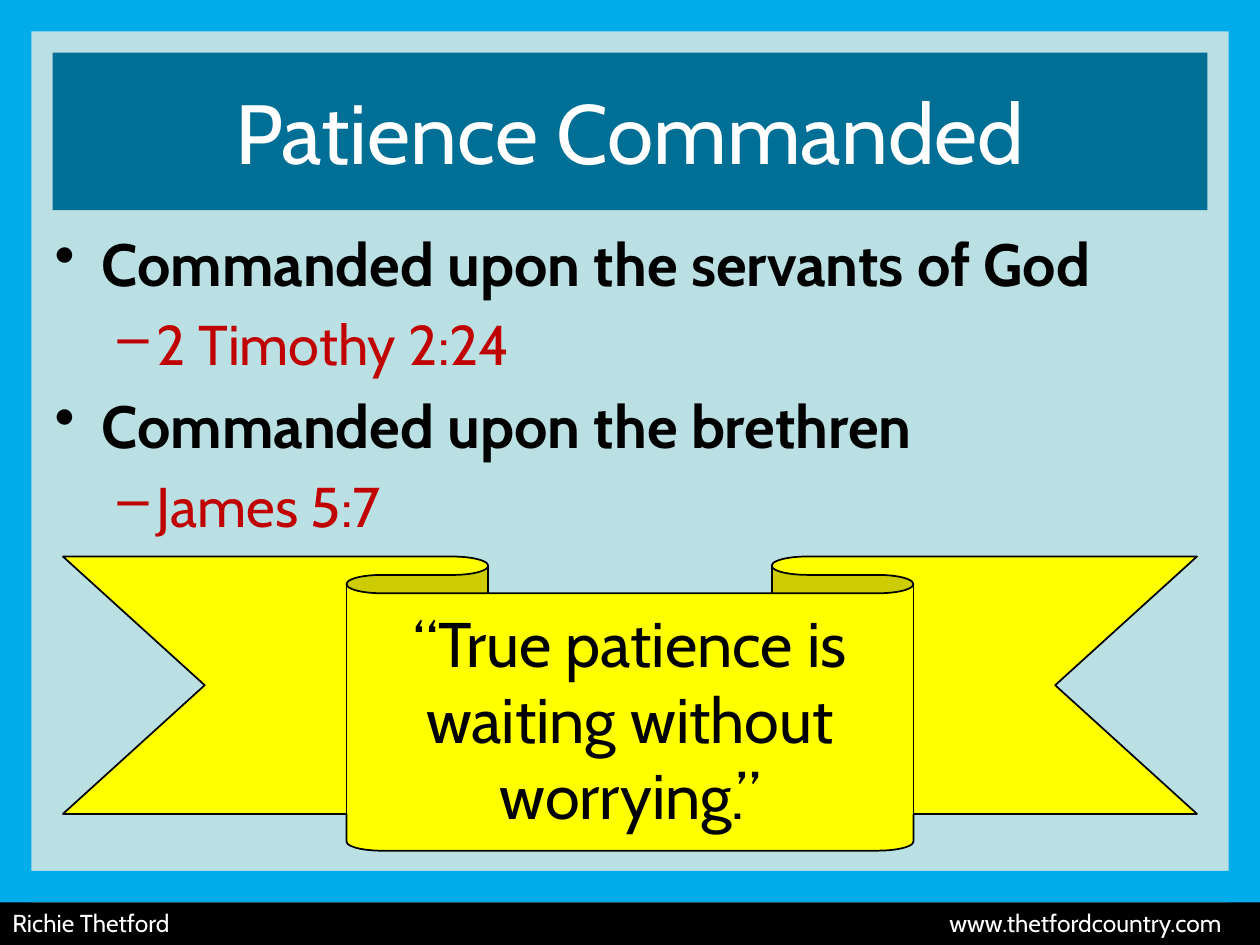
"""Build the "Patience Commanded" slide."""
from lxml.etree import SubElement
from pptx import Presentation
from pptx.dml.color import RGBColor
from pptx.enum.shapes import MSO_SHAPE as Shape
from pptx.enum.text import MSO_ANCHOR as Anchor, PP_ALIGN as Align
from pptx.oxml.ns import qn
from pptx.util import Cm, Pt

TITLE = "Patience Commanded"
COMMANDS = [
    ("Commanded upon the servants of God", "2 Timothy 2:24"),
    ("Commanded upon the brethren", "James 5:7"),
]
QUOTE = "“True patience is waiting without worrying.”"
FOOTER = ("Richie Thetford", "www.thetfordcountry.com")

FONT = "Cabin"
COLORS = {
    "background": "BBE0E3", "border": "00ADEA", "title": "006F96",
    "ribbon": "FFFF00", "verse": "C00000", "black": "000000", "white": "FFFFFF",
}
LEVELS = [
    {"bullet": "•", "margin": 0.95, "hang": 0.95, "size": 34, "color": "black", "bold": True},
    {"bullet": "–", "margin": 2.06, "hang": 0.79, "size": 32, "color": "verse", "bold": False},
]
WIDTH, HEIGHT, BORDER = 25.4, 19.05, 0.635
FOOTER_TOP = 18.19
FOOTER_TAB = 24.38


def rgb(name):
    return RGBColor.from_string(COLORS[name])


def add_block(slide, box, fill, kind=Shape.RECTANGLE):
    block = slide.shapes.add_shape(kind, *map(Cm, box))
    block.shadow.inherit = False
    block.fill.solid()
    block.fill.fore_color.rgb = rgb(fill)
    block.line.fill.background()
    return block


def write(paragraph, text, size, color, align=Align.LEFT, bold=False):
    paragraph.text = text
    paragraph.alignment = align
    font = paragraph.font
    font.name, font.size, font.bold = FONT, Pt(size), bold
    font.color.rgb = rgb(color)


def add_text_frame(slide, box):
    frame = slide.shapes.add_textbox(*map(Cm, box)).text_frame
    frame.word_wrap = True
    return frame


def add_commands(slide):
    frame = add_text_frame(slide, (0.85, 4.45, 23.7, 13.55))
    lines = [(text, level) for pair in COMMANDS for text, level in zip(pair, LEVELS)]
    for index, (text, level) in enumerate(lines):
        paragraph = frame.add_paragraph() if index else frame.paragraphs[0]
        write(paragraph, text, level["size"], level["color"], bold=level["bold"])
        paragraph.level = LEVELS.index(level)
        paragraph.space_before = Pt(0.2 * level["size"] if index else 0)
        properties = paragraph._p.get_or_add_pPr()
        properties.set("marL", str(Cm(level["margin"])))
        properties.set("indent", str(-Cm(level["hang"])))
        bullet = properties.makeelement(qn("a:buChar"), {"char": level["bullet"]})
        properties.insert_element_before(bullet, "a:tabLst", "a:defRPr", "a:extLst")


def add_border(slide):
    for box in [
        (0, 0, BORDER, HEIGHT),
        (WIDTH - BORDER, 0, BORDER, HEIGHT),
        (0, 0, WIDTH, BORDER),
        (0, FOOTER_TOP - BORDER, WIDTH, BORDER),
    ]:
        add_block(slide, box, "border")


def add_quote(slide):
    ribbon = add_block(slide, (1.27, 11.22, 22.86, 5.93), "ribbon", Shape.DOWN_RIBBON)
    ribbon.adjustments[0], ribbon.adjustments[1] = 0.125, 0.5
    ribbon.line.color.rgb = rgb("black")
    ribbon.line.width = Pt(1)
    frame = add_text_frame(slide, (7.41, 12.07, 10.58, 4.83))
    write(frame.paragraphs[0], QUOTE, 36, "black", Align.CENTER)


def add_title(slide):
    frame = add_block(slide, (1.06, 1.06, 23.28, 3.18), "title").text_frame
    frame.vertical_anchor = Anchor.MIDDLE
    write(frame.paragraphs[0], TITLE, 48, "white", Align.CENTER)


def add_footer(slide):
    box = (0, FOOTER_TOP, WIDTH, HEIGHT - FOOTER_TOP)
    frame = add_block(slide, box, "black").text_frame
    frame.vertical_anchor = Anchor.TOP
    paragraph = frame.paragraphs[0]
    write(paragraph, "\t".join(FOOTER), 14, "white")
    properties = paragraph._p.get_or_add_pPr()
    tabs = properties.makeelement(qn("a:tabLst"), {})
    SubElement(tabs, qn("a:tab"), pos=str(Cm(FOOTER_TAB)), algn="r")
    properties.insert_element_before(tabs, "a:defRPr", "a:extLst")


def main():
    deck = Presentation()
    deck.slide_width, deck.slide_height = Cm(WIDTH), Cm(HEIGHT)
    slide = deck.slides.add_slide(deck.slide_layouts[6])
    slide.background.fill.solid()
    slide.background.fill.fore_color.rgb = rgb("background")
    for add_part in (add_commands, add_border, add_quote, add_title, add_footer):
        add_part(slide)
    deck.save("out.pptx")


if __name__ == "__main__":
    main()
